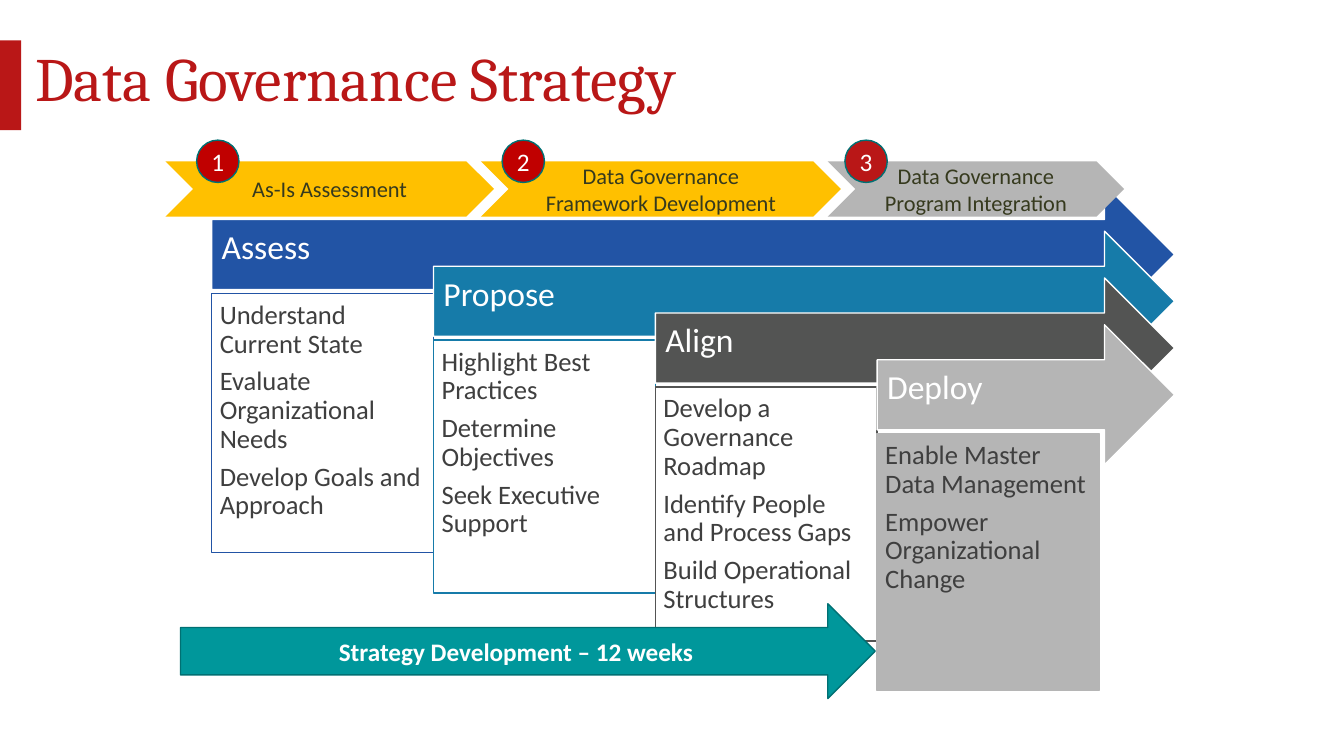
import pptx
import pptx.util
import pptx.dml.color
import pptx.enum.shapes
import pptx.enum.text

Inches, Pt = pptx.util.Inches, pptx.util.Pt
RGB = pptx.dml.color.RGBColor
SHAPE = pptx.enum.shapes.MSO_SHAPE
ALIGN = pptx.enum.text.PP_ALIGN
ANCHOR = pptx.enum.text.MSO_ANCHOR

RED = RGB(0xB9, 0x17, 0x17)
DEEP_RED = RGB(0xC0, 0x00, 0x00)
BLUE = RGB(0x22, 0x54, 0xA5)
SEA_BLUE = RGB(0x16, 0x7B, 0xA9)
CHARCOAL = RGB(0x53, 0x54, 0x53)
GRAY = RGB(0xB5, 0xB5, 0xB5)
AMBER = RGB(0xFF, 0xC0, 0x00)
TEAL = RGB(0x00, 0x97, 0x9B)
DARK_TEAL = RGB(0x00, 0x70, 0x73)
WHITE = RGB(0xFF, 0xFF, 0xFF)
TEXT = RGB(0x3F, 0x3F, 0x3F)
OLIVE = RGB(0x36, 0x3A, 0x1E)

STAGE_LEFT, STAGE_TOP = 2.1, 1.83
STEP_X, STEP_Y = 2.2, 0.464
ARROW_RIGHT, ARROW_HEIGHT = 11.65, 1.39
BOX_DROP = 1.08

# Name, colour, box fill, box height, points
STAGES = [
    ("Assess", BLUE, WHITE, 2.57,
     ["Understand Current State", "Evaluate Organizational Needs",
      "Develop Goals and Approach"]),
    ("Propose", SEA_BLUE, WHITE, 2.51,
     ["Highlight Best Practices", "Determine Objectives",
      "Seek Executive Support"]),
    ("Align", CHARCOAL, WHITE, 2.52,
     ["Develop a Governance Roadmap", "Identify People and Process Gaps",
      "Build Operational Structures"]),
    ("Deploy", GRAY, GRAY, 2.55,
     ["Enable Master Data Management", "Empower Organizational Change"]),
]

# Left, width, fill, lines, badge left, badge fill
PHASES = [
    (1.64, 3.26, AMBER, ["As-Is Assessment"], 1.95, DEEP_RED),
    (4.77, 3.57, AMBER, ["Data Governance", "Framework Development"],
     4.98, DEEP_RED),
    (8.21, 2.94, GRAY, ["Data Governance Program Integration"], 8.38, RED),
]


def add_box(s, kind, left, top, width, height, fill, line=None):
    sp = s.shapes.add_shape(kind, Inches(left), Inches(top),
                            Inches(width), Inches(height))
    sp.shadow.inherit = False
    sp.fill.solid()
    sp.fill.fore_color.rgb = fill
    if line is None:
        sp.line.fill.background()
    else:
        sp.line.color.rgb = line
        sp.line.width = Pt(1)
    return sp


def set_insets(tf, left, top, right, bottom):
    tf.margin_left, tf.margin_top = Inches(left), Inches(top)
    tf.margin_right, tf.margin_bottom = Inches(right), Inches(bottom)


def add_run(p, text, size, color, font="Calibri", bold=False):
    r = p.add_run()
    r.text = text
    r.font.name, r.font.size, r.font.bold = font, Pt(size), bold
    r.font.color.rgb = color


def add_label(sp, lines, size, color, bold=False):
    """Centre the lines of one paragraph in a shape."""
    tf = sp.text_frame
    tf.word_wrap = True
    tf.vertical_anchor = ANCHOR.MIDDLE
    p = tf.paragraphs[0]
    p.alignment = ALIGN.CENTER
    for i, line in enumerate(lines):
        if i:
            p.add_line_break()
        add_run(p, line, size, color, bold=bold)


def add_title(s, text):
    add_box(s, SHAPE.RECTANGLE, 0, 0.4, 0.21, 0.89, RED)
    sp = s.shapes.title
    sp.left, sp.top = Inches(0.25), Inches(0.43)
    sp.width, sp.height = Inches(12.51), Inches(0.85)
    tf = sp.text_frame
    tf.auto_size = pptx.enum.text.MSO_AUTO_SIZE.NONE
    tf.vertical_anchor = ANCHOR.TOP
    p = tf.paragraphs[0]
    p.alignment = ALIGN.LEFT
    p.line_spacing = 0.9
    add_run(p, text, 44, RED, "Cambria")


def add_stage(s, index, name, color, box_fill, box_height, points):
    left = STAGE_LEFT + index * STEP_X
    top = STAGE_TOP + index * STEP_Y

    # Header arrow
    sp = add_box(s, SHAPE.RIGHT_ARROW, left, top, ARROW_RIGHT - left,
                 ARROW_HEIGHT, color, WHITE)
    tf = sp.text_frame
    tf.vertical_anchor = ANCHOR.MIDDLE
    set_insets(tf, 0.1, 0.1, 0.28, 0.22)
    p = tf.paragraphs[0]
    p.alignment = ALIGN.LEFT
    p.line_spacing = 0.9
    add_run(p, name, 24, WHITE)

    # Points below the arrow
    sp = add_box(s, SHAPE.RECTANGLE, left, top + BOX_DROP, STEP_X,
                 box_height, box_fill, color)
    tf = sp.text_frame
    tf.word_wrap = True
    tf.vertical_anchor = ANCHOR.TOP
    set_insets(tf, 0.08, 0.08, 0.08, 0.08)
    for i, point in enumerate(points):
        p = tf.add_paragraph() if i else tf.paragraphs[0]
        p.alignment = ALIGN.LEFT
        p.line_spacing = 0.9
        p.space_after = Pt(6.5)
        add_run(p, point, 19, TEXT)


def add_phase(s, number, left, width, fill, lines, badge_left, badge_fill):
    sp = add_box(s, SHAPE.CHEVRON, left, 1.6, width, 0.55, fill)
    add_label(sp, lines, 16, OLIVE)
    sp = add_box(s, SHAPE.OVAL, badge_left, 1.39, 0.42, 0.42,
                 badge_fill, DARK_TEAL)
    set_insets(sp.text_frame, 0, 0, 0, 0)
    add_label(sp, [str(number)], 18, WHITE)


def main():
    prs = pptx.Presentation()
    prs.slide_width, prs.slide_height = Inches(13.33), Inches(7.5)
    s = prs.slides.add_slide(prs.slide_layouts[5])
    add_title(s, "Data Governance Strategy")

    # Overlapping stages
    for index, stage in enumerate(STAGES):
        add_stage(s, index, *stage)

    # Numbered phases
    for number, phase in enumerate(PHASES, 1):
        add_phase(s, number, *phase)

    # Timeline arrow
    sp = add_box(s, SHAPE.RIGHT_ARROW, 1.79, 5.99, 6.89, 0.94,
                 TEAL, DARK_TEAL)
    add_label(sp, ["Strategy Development – 12 weeks"], 18, WHITE, bold=True)

    prs.save("out.pptx")


if __name__ == "__main__":
    main()
